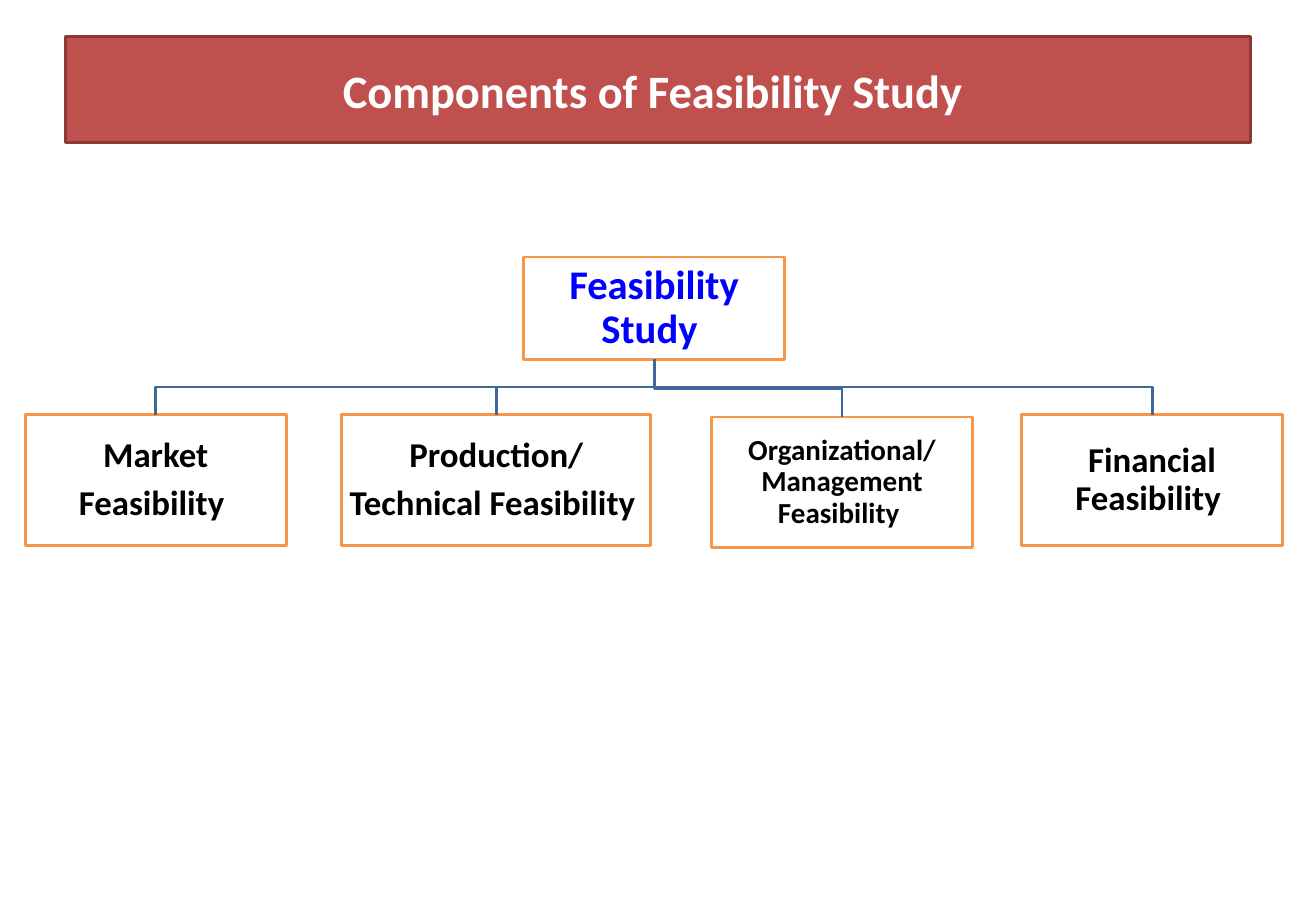
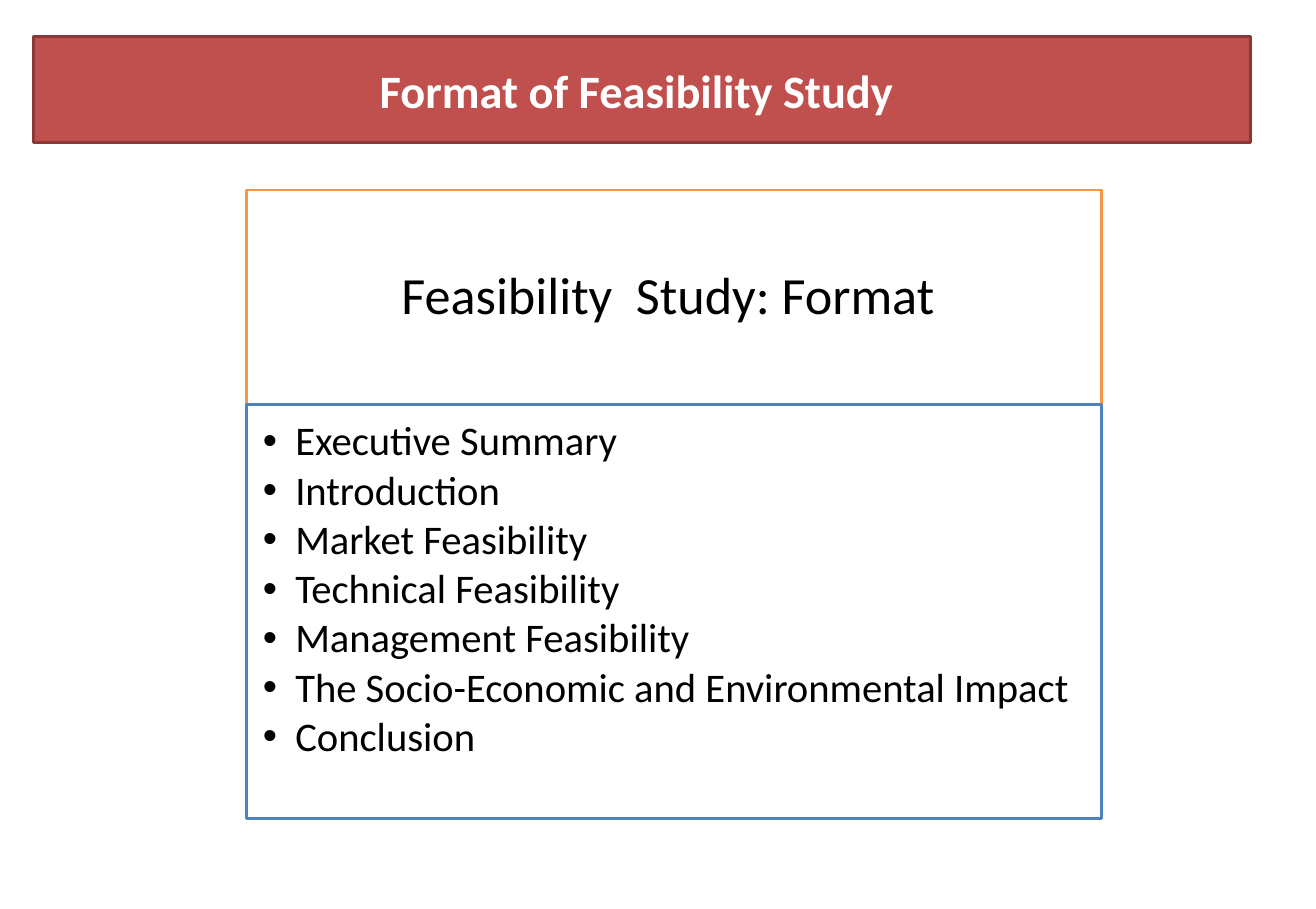
"""Build two slides on the components and format of a feasibility study."""
from pptx import Presentation
from pptx.dml.color import RGBColor
from pptx.enum.shapes import MSO_SHAPE
from pptx.enum.text import MSO_ANCHOR, MSO_AUTO_SIZE, PP_ALIGN
from pptx.util import Cm, Pt

FONT = "Calibri"
WHITE = RGBColor(0xFF, 0xFF, 0xFF)
BLACK = RGBColor(0x00, 0x00, 0x00)
RED = RGBColor(0xC0, 0x50, 0x4D)
DARK_RED = RGBColor(0x8C, 0x38, 0x36)
ORANGE = RGBColor(0xF7, 0x96, 0x46)
BLUE = RGBColor(0x4F, 0x81, 0xBD)
DARK_BLUE = RGBColor(0x3F, 0x67, 0x97)
BRIGHT_BLUE = RGBColor(0x00, 0x00, 0xFF)

TITLE_ONLY, TITLE_AND_CONTENT = 5, 1
BAND_RIGHT = 30.41
CHILD_TOP, CHILD_HEIGHT = 10.08, 3.18
COMPONENTS = [
    (["Market", "Feasibility "], 24, 0.61, CHILD_TOP, 6.35),
    (["Production/", "Technical Feasibility "], 24, 8.31, CHILD_TOP, 7.52),
    (["Organizational/ Management Feasibility "], 20, 17.3, CHILD_TOP + 0.06, 6.35),
    (["Financial Feasibility "], 24, 24.84, CHILD_TOP, 6.35),
]
SECTIONS = [
    "Executive Summary",
    "Introduction",
    "Market Feasibility",
    "Technical Feasibility",
    "Management Feasibility",
    "The Socio-Economic and Environmental Impact",
    "Conclusion",
]


def place(box, left, top, width, height):
    """Set the position and size of a box in centimetres."""
    box.left, box.top, box.width, box.height = map(Cm, (left, top, width, height))


def paint(box, fill, line):
    """Give a box a solid fill and a two-point outline."""
    box.fill.solid()
    box.fill.fore_color.rgb = fill
    box.line.color.rgb = line
    box.line.width = Pt(2)


def write(box, lines, size, color=BLACK, bold=False, align=PP_ALIGN.CENTER,
          anchor=MSO_ANCHOR.MIDDLE, insets=(0.05, 0.05, 0.05, 0.05),
          spacing=0.9, after=0.0):
    """Write one paragraph per line with the given format."""
    frame = box.text_frame
    frame.word_wrap = True
    frame.auto_size = MSO_AUTO_SIZE.NONE
    frame.vertical_anchor = anchor
    (frame.margin_left, frame.margin_top,
     frame.margin_right, frame.margin_bottom) = map(Cm, insets)
    frame.text = "\n".join(lines)
    for para in frame.paragraphs:
        para.alignment = align
        para.line_spacing = spacing
        para.space_before = Pt(0)
        para.space_after = Pt(after)
        for span in para.runs:
            span.font.name = FONT
            span.font.size = Pt(size)
            span.font.bold = bold
            span.font.color.rgb = color


def add_page(deck, layout, title, band_left):
    """Add a page whose title stands in a red band."""
    page = deck.slides.add_slide(deck.slide_layouts[layout])
    band = page.shapes.title
    place(band, band_left, 0.89, BAND_RIGHT - band_left, 2.57)
    paint(band, RED, DARK_RED)
    write(band, [title], 32, color=WHITE, bold=True, spacing=1.0,
          insets=(0.28, 0.15, 0.28, 0.15))
    return page


def add_box(page, lines, size, left, top, width, height, **style):
    """Add a white box with an orange outline and centred text."""
    box = page.shapes.add_shape(
        MSO_SHAPE.RECTANGLE, Cm(left), Cm(top), Cm(width), Cm(height))
    box.shadow.inherit = False
    paint(box, WHITE, ORANGE)
    write(box, lines, size, after=7.4, **style)
    return box


def add_branch(page, parent, child):
    """Draw a stepped line from the foot of the parent to the head of the child."""
    start_x = parent.left + parent.width // 2
    start_y = parent.top + parent.height
    end_x = child.left + child.width // 2
    middle_y = (start_y + child.top) // 2
    outline = page.shapes.build_freeform(start_x, start_y)
    outline.add_line_segments(
        [(start_x, middle_y), (end_x, middle_y), (end_x, child.top)], close=False)
    branch = outline.convert_to_shape()
    branch.shadow.inherit = False
    branch.fill.background()
    branch.line.color.rgb = DARK_BLUE
    branch.line.width = Pt(2)


def fill_list(box, items):
    """Turn a body placeholder into an outlined bullet list."""
    paint(box, WHITE, BLUE)
    write(box, items, 28, align=PP_ALIGN.LEFT, anchor=MSO_ANCHOR.TOP,
          insets=(0.4, 0.4, 0.55, 0.6), after=3.7)
    for para in box.text_frame.paragraphs:
        properties = para._p.get_or_add_pPr()
        properties.set("marL", str(Cm(0.79)))
        properties.set("indent", str(-Cm(0.79)))


def add_components_page(deck):
    """Add the tree of feasibility components."""
    page = add_page(deck, TITLE_ONLY, "Components of Feasibility Study ", 1.6)
    root = add_box(page, ["Feasibility Study "], 28, 12.73, 6.25, 6.35, 2.49,
                   color=BRIGHT_BLUE, bold=True)
    for lines, size, left, top, width in COMPONENTS:
        child = add_box(page, lines, size, left, top, width, CHILD_HEIGHT, bold=True)
        add_branch(page, root, child)


def add_format_page(deck):
    """Add the headed list of report sections."""
    page = add_page(deck, TITLE_AND_CONTENT, "Format of Feasibility Study ", 0.81)
    left, top, width, heading_height = 5.99, 4.62, 20.8, 5.21
    heading = add_box(page, ["Feasibility  Study: Format "], 36,
                      left, top, width, heading_height, insets=(0.7, 0.4, 0.7, 0.4))
    sections = page.placeholders[1]
    place(sections, left, top + heading_height, width, 10.06)
    fill_list(sections, SECTIONS)
    sections._element.addprevious(heading._element)


def main():
    """Build and save the deck."""
    deck = Presentation()
    deck.slide_width, deck.slide_height = Cm(32), Cm(22.1)
    add_components_page(deck)
    add_format_page(deck)
    deck.save("out.pptx")


if __name__ == "__main__":
    main()
